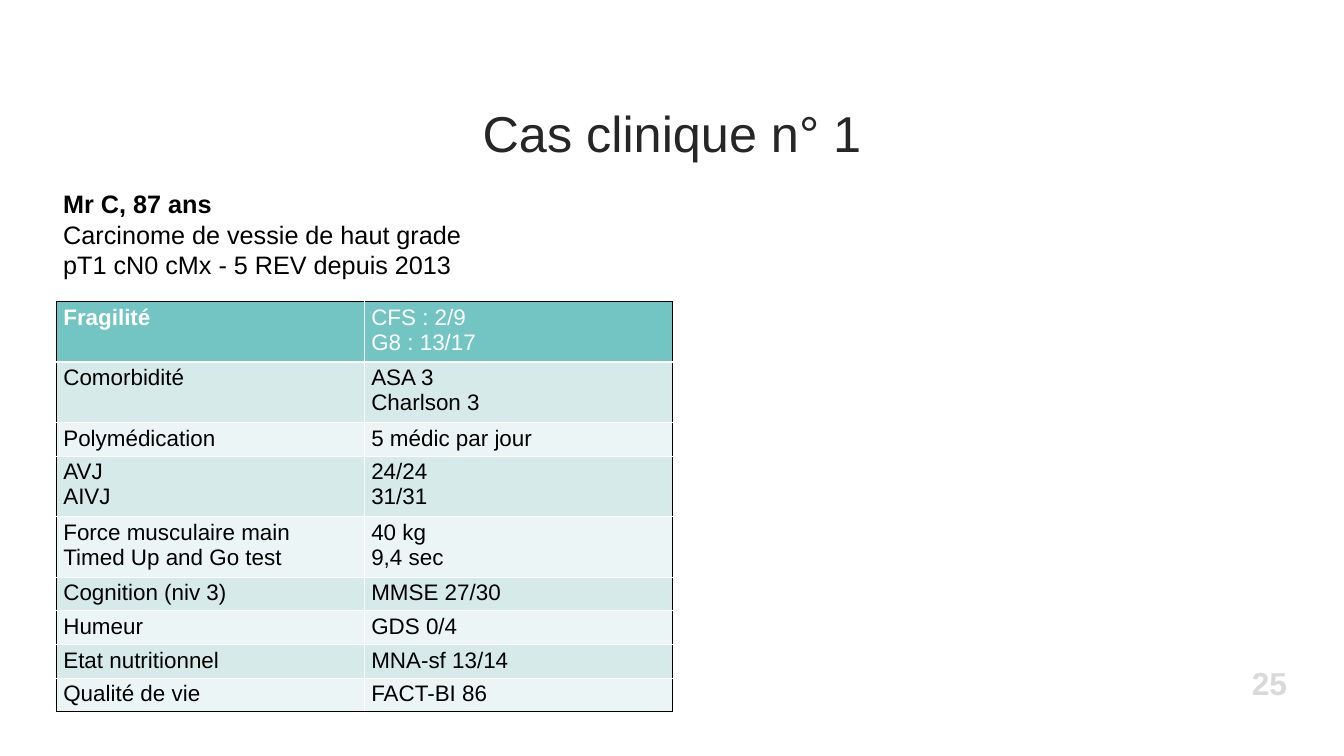
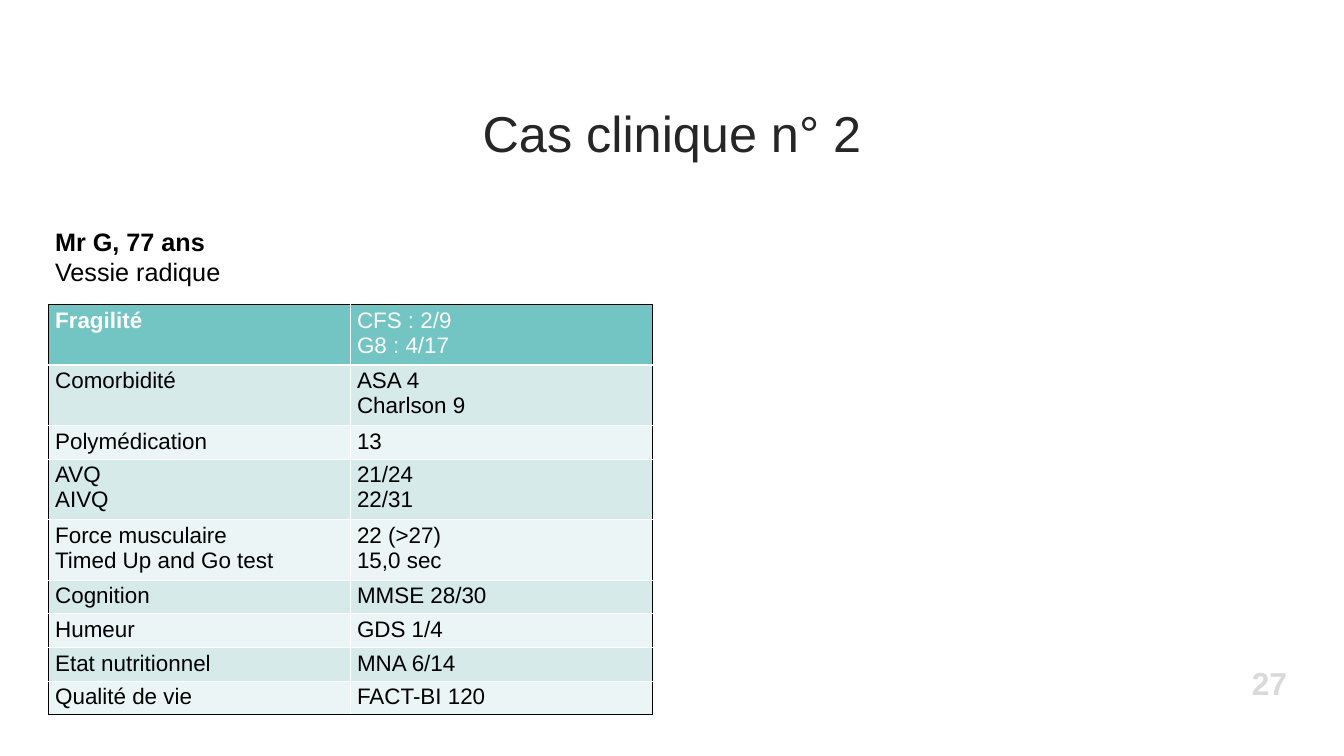
from lxml.etree import SubElement
from pptx import Presentation
from pptx.dml.color import RGBColor
from pptx.enum.text import MSO_ANCHOR as Anchor, PP_ALIGN as Align
from pptx.oxml.ns import qn
from pptx.util import Cm, Pt

FONT = "Arial"
WHITE = RGBColor(0xFF, 0xFF, 0xFF)
BLACK = RGBColor(0x00, 0x00, 0x00)
TITLE_GREY = RGBColor(0x26, 0x26, 0x26)
NUMBER_GREY = RGBColor(0xD9, 0xD9, 0xD9)
TEAL = RGBColor(0x72, 0xC5, 0xC3)
BANDS = (RGBColor(0xEB, 0xF5, 0xF5), RGBColor(0xD5, 0xEA, 0xE9))

# Least row height, which grows with the text, and table height, in cm
ROW_HEIGHT = 1.04
TABLE_HEIGHT = 15.49

# Content: positions are in cm, each assessment entry is a pair of line lists
CASES = [
    {
        "title": "Cas clinique n° 1",
        "number": "25",
        "left": 2.14,
        "patient_top": 7.01,
        "patient_size": (20.37, 3.71),
        "patient": ["Mr C, 87 ans", "Carcinome de vessie de haut grade",
                    "pT1 cN0 cMx - 5 REV depuis 2013"],
        "table_top": 11.4,
        "column_width": 11.64,
        "assessment": [
            (["Fragilité"], ["CFS : 2/9", "G8 : 13/17"]),
            (["Comorbidité"], ["ASA 3", "Charlson 3"]),
            (["Polymédication"], ["5 médic par jour"]),
            (["AVJ", "AIVJ"], ["24/24", "31/31"]),
            (["Force musculaire main", "Timed Up and Go test"], ["40 kg", "9,4 sec"]),
            (["Cognition (niv 3)"], ["MMSE 27/30"]),
            (["Humeur"], ["GDS 0/4"]),
            (["Etat nutritionnel"], ["MNA-sf 13/14"]),
            (["Qualité de vie"], ["FACT-BI 86"]),
        ],
    },
    {
        "title": "Cas clinique n° 2",
        "number": "27",
        "left": 1.83,
        "patient_top": 8.43,
        "patient_size": (19.79, 2.57),
        "patient": ["Mr G, 77 ans", "Vessie radique"],
        "table_top": 11.51,
        "column_width": 11.41,
        "assessment": [
            (["Fragilité"], ["CFS : 2/9", "G8 : 4/17"]),
            (["Comorbidité"], ["ASA 4", "Charlson 9"]),
            (["Polymédication"], ["13"]),
            (["AVQ", "AIVQ"], ["21/24", "22/31"]),
            (["Force musculaire", "Timed Up and Go test"], ["22 (>27)", "15,0 sec"]),
            (["Cognition"], ["MMSE 28/30"]),
            (["Humeur"], ["GDS 1/4"]),
            (["Etat nutritionnel"], ["MNA 6/14"]),
            (["Qualité de vie"], ["FACT-BI 120"]),
        ],
    },
]


def write_lines(frame, lines, size, color, bold_lines=0, align=Align.LEFT, spacing=None):
    """Write one paragraph per line; the first bold_lines are bold."""
    for index, line in enumerate(lines):
        paragraph = frame.paragraphs[0] if index == 0 else frame.add_paragraph()
        paragraph.alignment = align
        if spacing:
            paragraph.line_spacing = spacing
        run = paragraph.add_run()
        run.text = line
        font = run.font
        font.name, font.size, font.bold = FONT, Pt(size), index < bold_lines
        font.color.rgb = color


def add_text(slide, left, top, width, height, lines, size, color, anchor=Anchor.TOP, **style):
    frame = slide.shapes.add_textbox(Cm(left), Cm(top), Cm(width), Cm(height)).text_frame
    frame.word_wrap = True
    frame.vertical_anchor = anchor
    write_lines(frame, lines, size, color, **style)


def set_borders(cell, borders):
    """Borders are (side, colour, points), in the order L, R, T, B."""
    properties = cell._tc.get_or_add_tcPr()
    for position, (side, color, points) in enumerate(borders):
        line = SubElement(properties, qn(f"a:ln{side}"), w=str(Pt(points)))
        fill = SubElement(line, qn("a:solidFill"))
        SubElement(fill, qn("a:srgbClr"), val=str(color))
        properties.insert(position, line)


def add_assessment(slide, left, top, column_width, rows):
    holder = slide.shapes.add_table(len(rows), 2, Cm(left), Cm(top),
                                    Cm(2 * column_width), Cm(TABLE_HEIGHT))
    table = holder.table
    for column in table.columns:
        column.width = Cm(column_width)
    last = len(rows) - 1
    for r, row in enumerate(rows):
        table.rows[r].height = Cm(ROW_HEIGHT)
        header = r == 0
        for c, lines in enumerate(row):
            cell = table.cell(r, c)
            cell.fill.solid()
            cell.fill.fore_color.rgb = TEAL if header else BANDS[r % 2]
            write_lines(cell.text_frame, lines, 24, WHITE if header else BLACK,
                        bold_lines=1 if header and c == 0 else 0)
            # Black frame outside, white rules inside, thicker under the header
            set_borders(cell, [
                ("L", BLACK if c == 0 else WHITE, 1),
                ("R", BLACK if c == 1 else WHITE, 1),
                ("T", BLACK if header else WHITE, 3 if r == 1 else 1),
                ("B", BLACK if r == last else WHITE, 3 if header else 1),
            ])
    # Row heights change the height of the whole table, so set it last
    holder.height = Cm(TABLE_HEIGHT)


def add_case(deck, case):
    slide = deck.slides.add_slide(deck.slide_layouts[6])
    # Page number and title
    add_text(slide, 43.13, 24.97, 5.77, 1.7, [case["number"]], 34, NUMBER_GREY,
             Anchor.MIDDLE, bold_lines=1, align=Align.RIGHT)
    add_text(slide, 3.5, 3.99, 43.8, 2.34, [case["title"]], 54, TITLE_GREY,
             Anchor.MIDDLE, align=Align.CENTER, spacing=0.9)
    # Geriatric assessment and patient
    add_assessment(slide, case["left"], case["table_top"], case["column_width"],
                   case["assessment"])
    add_text(slide, case["left"], case["patient_top"], *case["patient_size"],
             case["patient"], 27, BLACK, bold_lines=1)


def main():
    deck = Presentation()
    deck.slide_width = Cm(50.8)
    deck.slide_height = deck.slide_width * 9 // 16
    for case in CASES:
        add_case(deck, case)
    deck.save("out.pptx")


if __name__ == "__main__":
    main()
